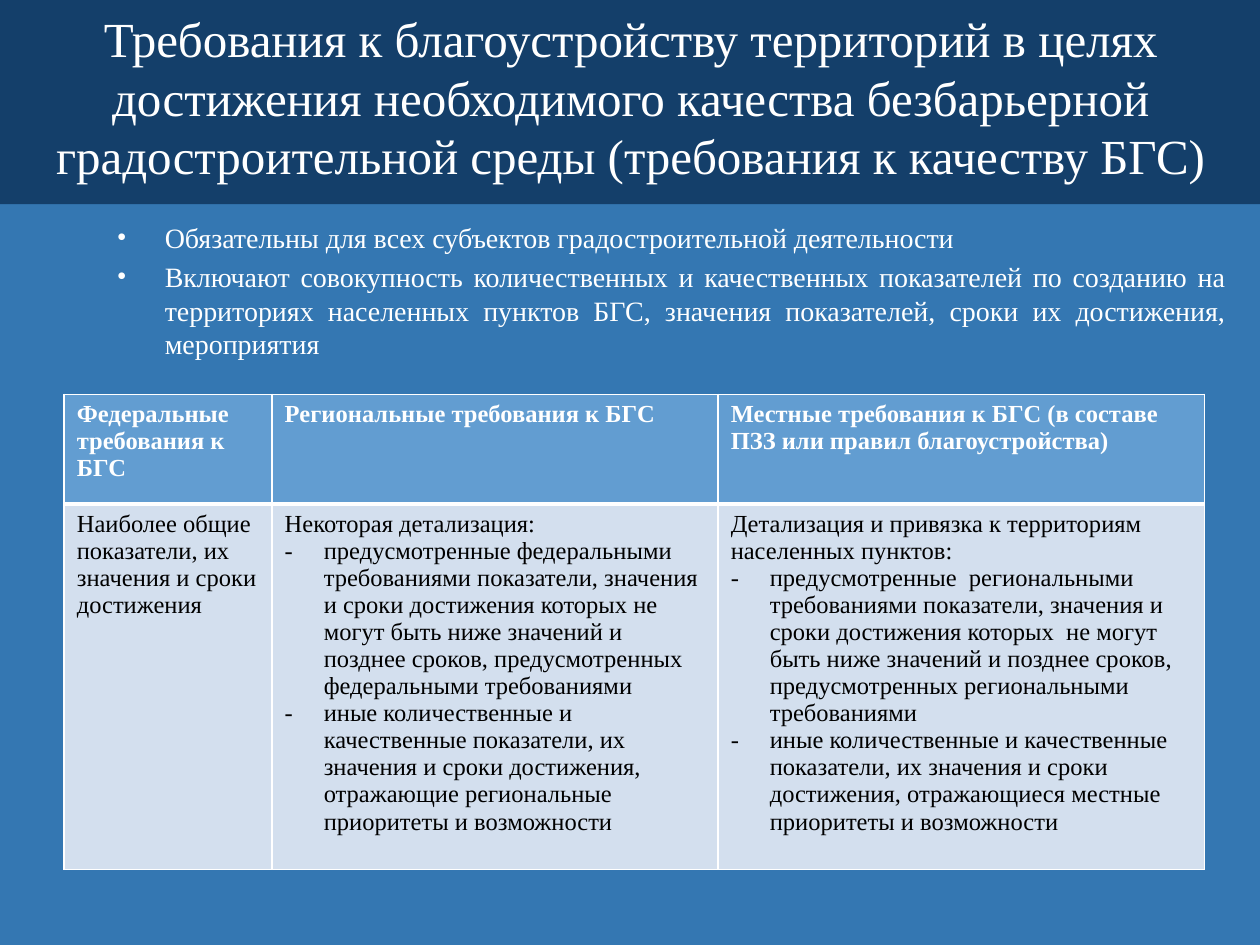
import pptx
import pptx.dml.color
import pptx.enum.shapes
import pptx.enum.text
import pptx.oxml.ns
import pptx.util
from lxml import etree

Inches = pptx.util.Inches
Pt = pptx.util.Pt
RGBColor = pptx.dml.color.RGBColor
ALIGN = pptx.enum.text.PP_ALIGN
ANCHOR = pptx.enum.text.MSO_ANCHOR
qn = pptx.oxml.ns.qn

WHITE = RGBColor(0xFF, 0xFF, 0xFF)
BLACK = RGBColor(0x00, 0x00, 0x00)
NAVY = RGBColor(0x14, 0x3F, 0x6A)
BLUE = RGBColor(0x34, 0x77, 0xB2)
SKY = RGBColor(0x62, 0x9D, 0xD1)
PALE = RGBColor(0xD3, 0xDF, 0xEE)

TITLE = ("Требования к благоустройству территорий в целях достижения необходимого "
         "качества безбарьерной градостроительной среды (требования к качеству БГС)")
POINTS = [
    "Обязательны для всех субъектов градостроительной деятельности",
    "Включают совокупность количественных и качественных показателей по созданию на "
    "территориях населенных пунктов БГС, значения показателей, сроки их достижения, "
    "мероприятия",
]
HEADINGS = [
    "Федеральные требования к БГС",
    "Региональные требования к БГС",
    "Местные требования к БГС (в составе ПЗЗ или правил благоустройства)",
]
DETAILS = [
    ["Наиболее общие показатели, их значения и сроки достижения"],
    ["Некоторая детализация:",
     "предусмотренные федеральными требованиями показатели, значения и сроки достижения "
     "которых не могут быть ниже значений и позднее сроков, предусмотренных "
     "федеральными требованиями",
     "иные количественные и качественные показатели, их значения и сроки достижения, "
     "отражающие региональные приоритеты и возможности"],
    ["Детализация и привязка к территориям населенных пунктов:",
     "предусмотренные  региональными требованиями показатели, значения и сроки достижения "
     "которых  не могут быть ниже значений и позднее сроков, предусмотренных "
     "региональными требованиями",
     "иные количественные и качественные показатели, их значения и сроки достижения, "
     "отражающиеся местные приоритеты и возможности"],
]


class PageBuilder:
    font = "Times New Roman"

    def __init__(self, page):
        self.page = page

    def background(self, color):
        fill = self.page.background.fill
        fill.solid()
        fill.fore_color.rgb = color

    def band(self, left, top, width, height, color):
        shape = self.page.shapes.add_shape(
            pptx.enum.shapes.MSO_SHAPE.RECTANGLE,
            Inches(left), Inches(top), Inches(width), Inches(height))
        shape.shadow.inherit = False
        shape.fill.solid()
        shape.fill.fore_color.rgb = color
        shape.line.fill.background()

    def bullet(self, para, mark, indent):
        properties = para._p.get_or_add_pPr()
        properties.set("marL", str(Inches(indent)))
        properties.set("indent", str(-Inches(indent)))
        font = etree.Element(qn("a:buFont"), typeface=self.font)
        character = etree.Element(qn("a:buChar"), char=mark)
        defaults = properties.find(qn("a:defRPr"))
        defaults.addprevious(font)
        defaults.addprevious(character)

    def paragraphs(self, frame, texts, size, color, align=ALIGN.LEFT, bold=False,
                   before=0, mark=None, indent=0, plain=0):
        frame.word_wrap = True
        for index, text in enumerate(texts):
            para = frame.paragraphs[0] if index == 0 else frame.add_paragraph()
            para.alignment = align
            para.space_before = Pt(before)
            para.font.name = self.font
            para.font.size = Pt(size)
            span = para.add_run()
            span.text = text
            for font in (para.font, span.font):
                font.name = self.font
                font.size = Pt(size)
                font.bold = bold
                font.color.rgb = color
            if mark and index >= plain:
                self.bullet(para, mark, indent)

    def text(self, left, top, width, height, texts, size, anchor=ANCHOR.TOP, **style):
        box = self.page.shapes.add_textbox(
            Inches(left), Inches(top), Inches(width), Inches(height))
        box.text_frame.vertical_anchor = anchor
        self.paragraphs(box.text_frame, texts, size, WHITE, **style)

    def borders(self, cell, widths):
        properties = cell._tc.get_or_add_tcPr()
        for position, (side, width) in enumerate(widths.items()):
            line = etree.Element(qn("a:ln" + side), w=str(Pt(width)))
            fill = etree.SubElement(line, qn("a:solidFill"))
            etree.SubElement(fill, qn("a:srgbClr"), val=str(WHITE))
            properties.insert(position, line)

    def cell(self, cell, texts, fill, color, widths, **style):
        cell.fill.solid()
        cell.fill.fore_color.rgb = fill
        self.paragraphs(cell.text_frame, texts, 14, color, **style)
        self.borders(cell, widths)

    def table(self, left, top, columns, rows, headings, details):
        table = self.page.shapes.add_table(
            len(rows), len(columns), Inches(left), Inches(top),
            Inches(sum(columns)), Inches(sum(rows))).table
        for column, width in zip(table.columns, columns):
            column.width = Inches(width)
        for row, height in zip(table.rows, rows):
            row.height = Inches(height)
        for index, (heading, detail) in enumerate(zip(headings, details)):
            self.cell(table.cell(0, index), [heading], SKY, WHITE,
                      {"L": 1, "R": 1, "T": 1, "B": 3}, bold=True)
            self.cell(table.cell(1, index), detail, PALE, BLACK,
                      {"L": 1, "R": 1, "T": 3, "B": 1},
                      mark="-", indent=0.31, plain=1)


def main():
    deck = pptx.Presentation()
    deck.slide_width = Inches(10)
    deck.slide_height = Inches(7.5)
    builder = PageBuilder(deck.slides.add_slide(deck.slide_layouts[6]))
    builder.background(BLUE)
    builder.band(0, 0, 10, 1.62, NAVY)
    builder.text(0.16, 0.14, 9.69, 1.25, [TITLE], 28,
                 anchor=ANCHOR.MIDDLE, align=ALIGN.CENTER)
    builder.text(0.83, 1.7, 9, 1.26, POINTS, 16, align=ALIGN.JUSTIFY,
                 before=3.2, mark="•", indent=0.38)
    builder.table(0.51, 3.13, [1.65, 3.54, 3.86], [0.87, 2.67], HEADINGS, DETAILS)
    deck.save("out.pptx")


if __name__ == "__main__":
    main()
